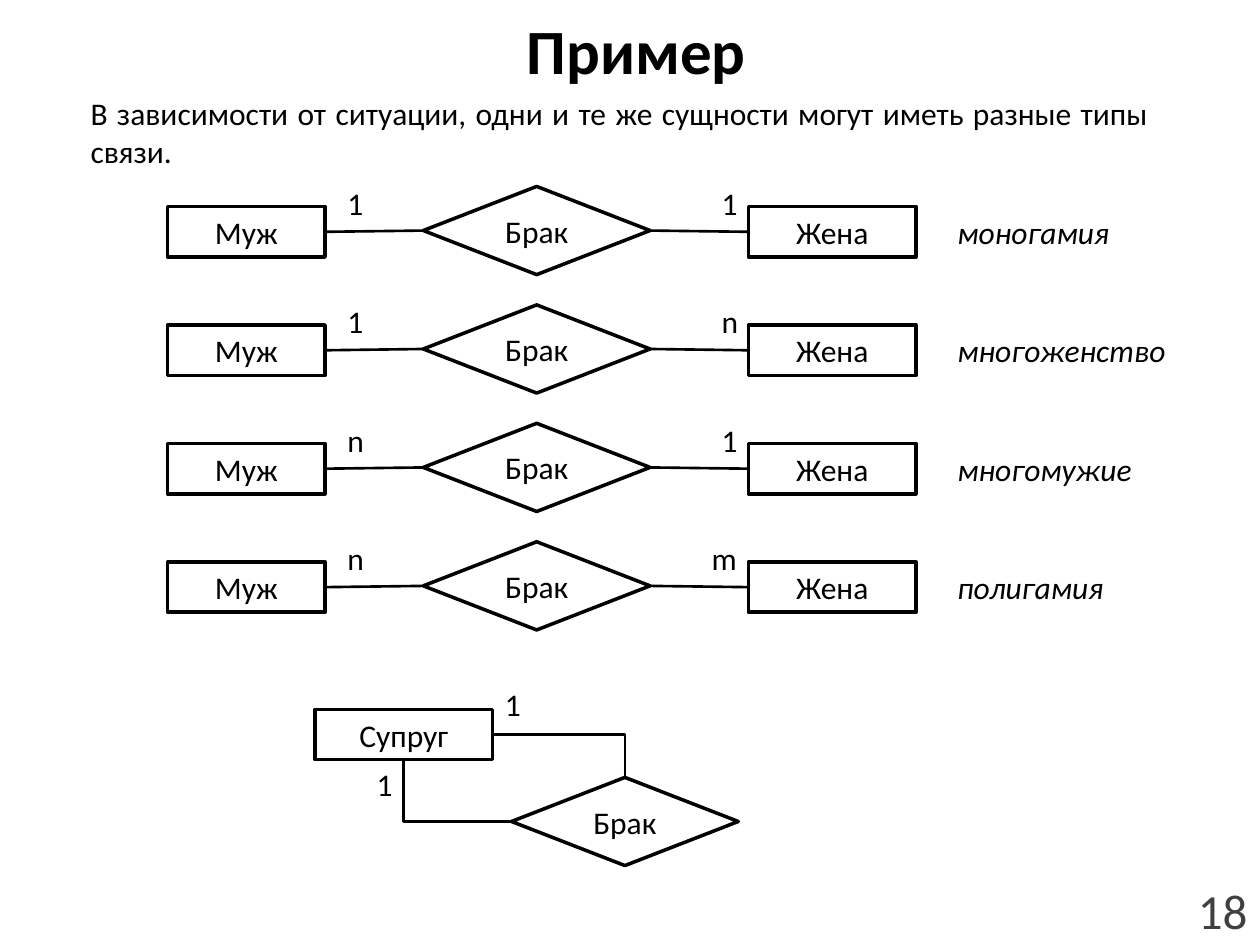
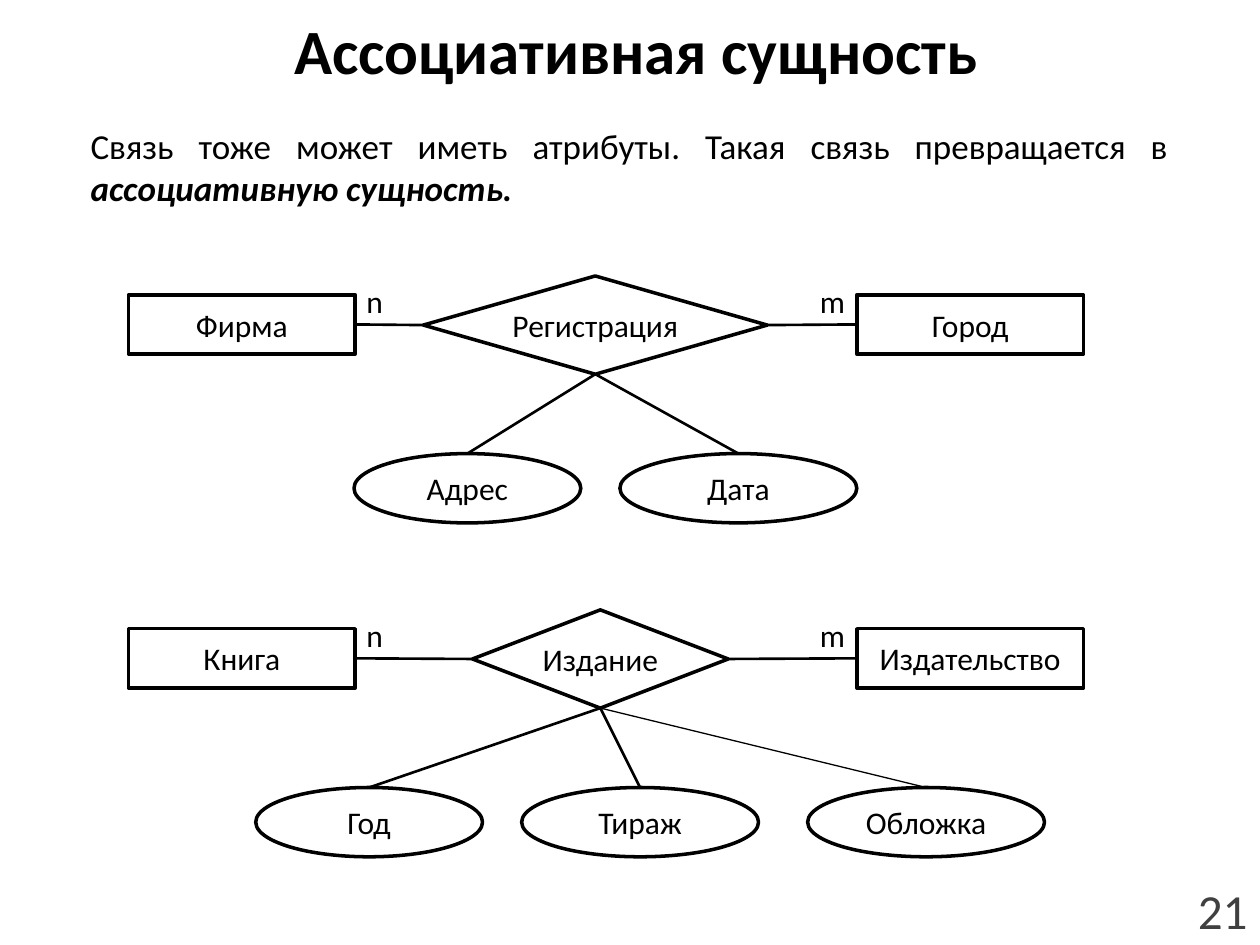
"""Build two slides of entity-relationship diagrams."""
from dataclasses import dataclass
from typing import Any

from lxml import etree
from pptx import Presentation
from pptx import util as u
from pptx.dml import color
from pptx.enum import shapes, text
from pptx.oxml import ns

COLORS = {"ink": "000000", "paper": "FFFFFF", "number": "404040"}
FONT = "Calibri"
TOP, LEFT, BOTTOM, RIGHT = range(4)
KINDS = {
    "entity": shapes.MSO_SHAPE.RECTANGLE,
    "relation": shapes.MSO_SHAPE.DIAMOND,
    "attribute": shapes.MSO_SHAPE.OVAL,
}
NO_MARGINS = {f"margin_{side}": 0 for side in ("left", "top", "right", "bottom")}
ALIGN = text.PP_ALIGN
MIDDLE = {"vertical_anchor": text.MSO_ANCHOR.MIDDLE, "word_wrap": True}
WRAPPED = {"word_wrap": True}
UNWRAPPED = {"word_wrap": False, "auto_size": text.MSO_AUTO_SIZE.SHAPE_TO_FIT_TEXT}


@dataclass(frozen=True)
class Box:
    left: float
    top: float
    width: float
    height: float

    def lengths(self) -> list[u.Length]:
        return [u.Inches(value) for value in (self.left, self.top, self.width, self.height)]


@dataclass(frozen=True)
class Run:
    words: str
    size: float = 18
    bold: bool = False
    italic: bool = False
    ink: str = "ink"


@dataclass(frozen=True)
class Marriage:
    husbands: str
    wives: str
    name: str
    name_width: float


@dataclass(frozen=True)
class Attribute:
    name: str
    left: float
    width: float = 1.88
    line_width: float = 1.5


@dataclass(frozen=True)
class Association:
    first: str
    relation: str
    second: str
    top: float
    left: float
    width: float
    attributes: tuple[Attribute, ...]


MARRIAGES = (
    Marriage("1", "1", "моногамия", 1.41),
    Marriage("1", "n", "многоженство", 1.87),
    Marriage("n", "1", "многомужие", 1.6),
    Marriage("n", "m", "полигамия", 1.36),
)
ASSOCIATIONS = (
    Association("Фирма", "Регистрация", "Город", 2.19, 3.36, 2.73,
                (Attribute("Адрес", 2.81, 1.8), Attribute("Дата", 4.92))),
    Association("Книга", "Издание", "Издательство", 4.84, 3.75, 2.03,
                (Attribute("Год", 2.03, 1.8), Attribute("Тираж", 4.14),
                 Attribute("Обложка", 6.41, line_width=0.75))),
)


def apply(target: Any, values: dict[str, Any]) -> None:
    for name, value in values.items():
        setattr(target, name, value)


def rgb(name: str) -> color.RGBColor:
    return color.RGBColor.from_string(COLORS[name])


def write(shape: Any, runs: list[Run], alignment: Any, frame: dict[str, Any]) -> None:
    apply(shape.text_frame, frame)
    paragraph = shape.text_frame.paragraphs[0]
    paragraph.alignment = alignment
    for item in runs:
        run = paragraph.add_run()
        run.text = item.words
        apply(run.font, {"name": FONT, "size": u.Pt(item.size),
                         "bold": item.bold, "italic": item.italic})
        run.font.color.rgb = rgb(item.ink)


def add_text(slide: Any, box: Box, runs: list[Run], alignment: Any = ALIGN.LEFT,
             frame: dict[str, Any] = UNWRAPPED) -> None:
    write(slide.shapes.add_textbox(*box.lengths()), runs, alignment, frame)


def add_multiplicity(slide: Any, left: float, top: float, symbol: str) -> None:
    width = 0.4 if symbol == "m" else 0.34
    add_text(slide, Box(left, top, width, 0.4), [Run(symbol)])


def add_node(slide: Any, kind: str, label: str, box: Box) -> Any:
    shape = slide.shapes.add_shape(KINDS[kind], *box.lengths())
    shape.shadow.inherit = False
    shape.fill.solid()
    shape.fill.fore_color.rgb = rgb("paper")
    shape.line.color.rgb = rgb("ink")
    shape.line.width = u.Pt(2)
    margins = {} if kind == "entity" else NO_MARGINS
    write(shape, [Run(label)], ALIGN.CENTER, MIDDLE | margins)
    return shape


def join(slide: Any, start: Any, start_side: int, end: Any, end_side: int,
         width: float = 1.5, bent: bool = False) -> None:
    kind = shapes.MSO_CONNECTOR.ELBOW if bent else shapes.MSO_CONNECTOR.STRAIGHT
    connector = slide.shapes.add_connector(kind, 0, 0, 0, 0)
    connector.begin_connect(start, start_side)
    connector.end_connect(end, end_side)
    connector.line.color.rgb = rgb("ink")
    connector.line.width = u.Pt(width)
    properties = connector._element.spPr
    etree.SubElement(properties, ns.qn("a:effectLst"))
    if bent:
        properties.find(ns.qn("a:prstGeom")).set("prst", "bentConnector2")


def add_slide(presentation: Any, title: str, number: int) -> Any:
    slide = presentation.slides.add_slide(presentation.slide_layouts[6])
    add_text(slide, Box(0.55, 0, 9, 0.78), [Run(title, 36, bold=True)], ALIGN.CENTER, MIDDLE)
    add_text(slide, Box(9.14, 6.95, 0.86, 0.55), [Run(str(number), 28, ink="number")],
             ALIGN.RIGHT, MIDDLE)
    return slide


def draw_marriage(slide: Any, marriage: Marriage, top: float) -> None:
    husband = add_node(slide, "entity", "Муж", Box(1.33, top, 1.25, 0.4))
    wife = add_node(slide, "entity", "Жена", Box(5.94, top, 1.33, 0.4))
    relation = add_node(slide, "relation", "Брак", Box(3.36, top - 0.16, 1.8, 0.7))
    join(slide, husband, RIGHT, relation, LEFT)
    join(slide, relation, RIGHT, wife, LEFT)
    add_multiplicity(slide, 2.66, top - 0.23, marriage.husbands)
    add_multiplicity(slide, 5.55 if marriage.wives == "m" else 5.63, top - 0.23, marriage.wives)
    add_text(slide, Box(7.5, top, marriage.name_width, 0.4), [Run(marriage.name, italic=True)])


def draw_spouses(slide: Any) -> None:
    spouse = add_node(slide, "entity", "Супруг", Box(2.5, 5.63, 1.41, 0.4))
    relation = add_node(slide, "relation", "Брак", Box(4.06, 6.17, 1.8, 0.7))
    join(slide, spouse, RIGHT, relation, TOP, bent=True)
    join(slide, relation, LEFT, spouse, BOTTOM, bent=True)
    for left, top in ((3.91, 5.39), (2.89, 6.02)):
        add_multiplicity(slide, left, top, "1")


def draw_association(slide: Any, association: Association) -> None:
    top = association.top
    first, second = (
        add_node(slide, "entity", label, Box(left, top + 0.15, 1.8, 0.47))
        for label, left in ((association.first, 1.02), (association.second, 6.8))
    )
    relation = add_node(slide, "relation", association.relation,
                        Box(association.left, top, association.width, 0.78))
    join(slide, first, RIGHT, relation, LEFT)
    join(slide, relation, RIGHT, second, LEFT)
    for attribute in association.attributes:
        oval = add_node(slide, "attribute", attribute.name,
                        Box(attribute.left, top + 1.41, attribute.width, 0.55))
        join(slide, relation, BOTTOM, oval, TOP, attribute.line_width)
    add_multiplicity(slide, 2.81, top, "n")
    add_multiplicity(slide, 6.41, top, "m")


def main() -> None:
    presentation = Presentation()
    apply(presentation, {"slide_width": u.Inches(10), "slide_height": u.Inches(7.5)})

    slide = add_slide(presentation, "Пример", 18)
    add_text(slide, Box(0.62, 0.7, 8.59, 0.71),
             [Run("В зависимости от ситуации, одни и те же сущности могут иметь разные типы связи.")],
             ALIGN.JUSTIFY, WRAPPED)
    for row, marriage in enumerate(MARRIAGES):
        draw_marriage(slide, marriage, 1.64 + 0.94 * row)
    draw_spouses(slide)

    slide = add_slide(presentation, "Ассоциативная сущность", 21)
    add_text(slide, Box(0.62, 0.94, 8.75, 0.77),
             [Run("Связь тоже может иметь атрибуты. Такая связь превращается в ", 20),
              Run("ассоциативную сущность.", 20, bold=True, italic=True)],
             ALIGN.JUSTIFY, WRAPPED)
    for association in ASSOCIATIONS:
        draw_association(slide, association)

    presentation.save("out.pptx")


if __name__ == "__main__":
    main()
